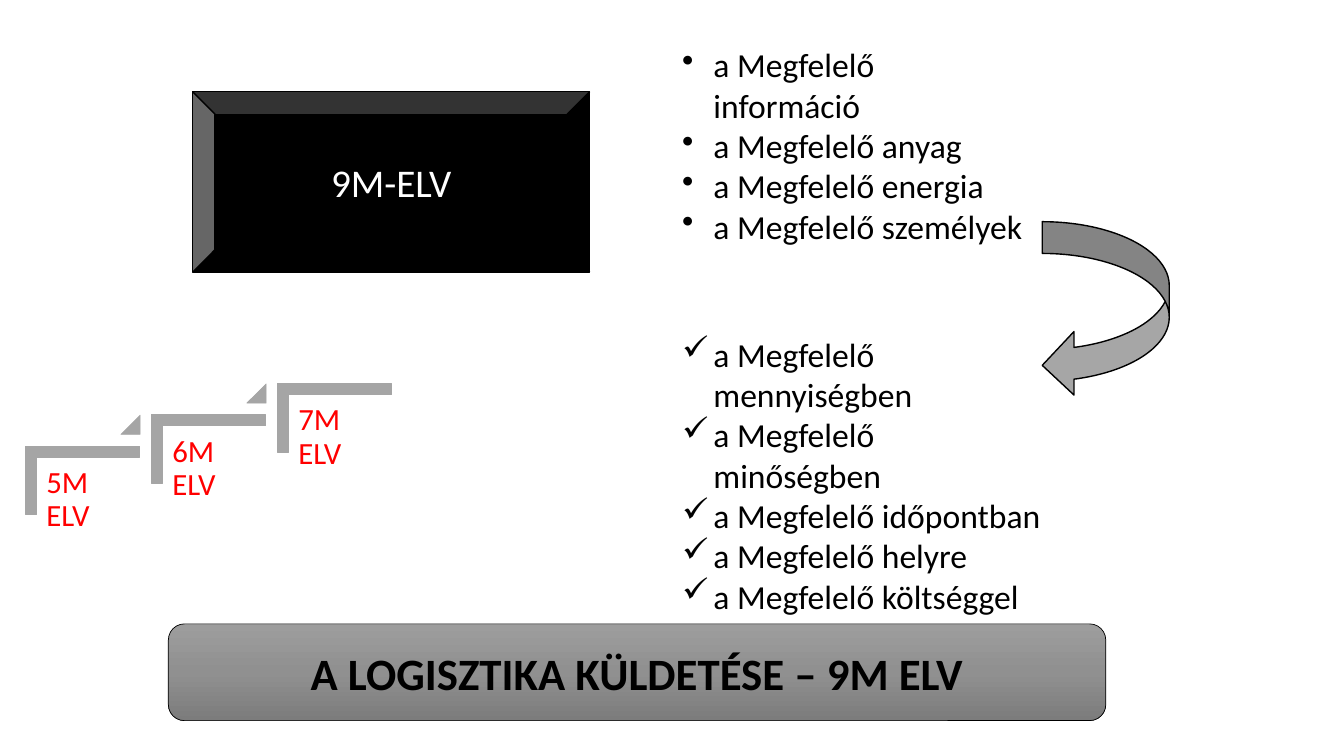
from copy import deepcopy

from lxml import etree
from pptx import Presentation
from pptx.dml.color import RGBColor
from pptx.enum.shapes import MSO_SHAPE
from pptx.enum.text import MSO_ANCHOR, MSO_AUTO_SIZE, PP_ALIGN
from pptx.oxml.ns import qn
from pptx.util import Inches, Pt

BANNER, BEVEL = MSO_SHAPE.ROUNDED_RECTANGLE, MSO_SHAPE.BEVEL
CORNER, TRIANGLE = MSO_SHAPE.CORNER, MSO_SHAPE.ISOSCELES_TRIANGLE
BENT_ARROW = MSO_SHAPE.CURVED_LEFT_ARROW
CENTER, MIDDLE = PP_ALIGN.CENTER, MSO_ANCHOR.MIDDLE
GROW = MSO_AUTO_SIZE.SHAPE_TO_FIT_TEXT

BLACK = RGBColor(0x00, 0x00, 0x00)
WHITE = RGBColor(0xFF, 0xFF, 0xFF)
RED = RGBColor(0xFF, 0x00, 0x00)
STEP_GRAY = RGBColor(0xA5, 0xA5, 0xA5)
ARROW_GRAY = RGBColor(0xA6, 0xA6, 0xA6)
BANNER_STOPS = [(0, RGBColor(0x9D, 0x9D, 0x9D)),
                (0.5, RGBColor(0x90, 0x90, 0x90)),
                (1, RGBColor(0x7C, 0x7C, 0x7C))]

FONT = "Calibri"
W, H = Inches(13.33), Inches(7.5)
INDENT = Inches(0.31)

# All boxes are left, top, width, height in percent of the slide
STEP_RUN, STEP_RISE = 9.37, 4.13
STEPS = ["5M ELV", "6M ELV", "7M ELV"]
INPUTS = ["a Megfelelő információ", "a Megfelelő anyag",
          "a Megfelelő energia", "a Megfelelő személyek"]
TARGETS = ["a Megfelelő mennyiségben", "a Megfelelő minőségben",
           "a Megfelelő időpontban", "a Megfelelő helyre",
           "a Megfelelő költséggel"]


def place(x, y, w, h):
    return [int(share * side / 100)
            for share, side in ((x, W), (y, H), (w, W), (h, H))]


def add_block(s, kind, box, color, line=BLACK, weight=1):
    sp = s.shapes.add_shape(kind, *place(*box))
    sp.shadow.inherit = False
    sp.fill.solid()
    sp.fill.fore_color.rgb = color
    sp.line.color.rgb = line
    sp.line.width = Pt(weight)
    return sp


def shade(sp, stops):
    """Fill a shape from top to bottom with three colour stops."""
    sp.fill.gradient()
    sp.fill.gradient_angle = 270
    first = sp._element.spPr.find(".//" + qn("a:gs"))
    first.addnext(deepcopy(first))
    for stop, (position, color) in zip(sp.fill.gradient_stops, stops):
        stop.position = position
        stop.color.rgb = color


def write(p, text, color, **font):
    r = p.add_run()
    r.text = text
    r.font.name = FONT
    r.font.color.rgb = color
    for name, value in font.items():
        setattr(r.font, name, value)


def add_caption(sp, text, color, **font):
    tf = sp.text_frame
    tf.vertical_anchor = MIDDLE
    p = tf.paragraphs[0]
    p.alignment = CENTER
    write(p, text, color, **font)


def add_text_box(s, box, **frame):
    tf = s.shapes.add_textbox(*place(*box)).text_frame
    tf.word_wrap = True
    for name, value in frame.items():
        setattr(tf, name, value)
    return tf


def add_list(s, box, items, bullet):
    tf = add_text_box(s, box, auto_size=GROW)
    for i, item in enumerate(items):
        p = tf.add_paragraph() if i else tf.paragraphs[0]
        pPr = p._p.get_or_add_pPr()
        pPr.set("marL", str(INDENT))
        pPr.set("indent", str(-INDENT))
        etree.SubElement(pPr, qn("a:buChar"), char=bullet)
        write(p, item, BLACK, size=Pt(24))


def add_step(s, i, label):
    dx, dy = i * STEP_RUN, -i * STEP_RISE
    corner = add_block(s, CORNER, (3.6 + dx, 56 + dy, 5.1, 15.07),
                       STEP_GRAY, STEP_GRAY, 0.5)
    corner.rotation = 90
    corner.adjustments[0] = corner.adjustments[1] = 0.16
    inset = Inches(0.09)
    tf = add_text_box(s, (2.78 + dx, 60.53 + dy, 7.65, 11.87),
                      margin_left=inset, margin_top=inset,
                      margin_right=inset, margin_bottom=inset)
    p = tf.paragraphs[0]
    p.line_spacing = 0.9
    write(p, label, RED, size=Pt(22))
    if i < len(STEPS) - 1:
        rise = add_block(s, TRIANGLE, (9 + dx, 54.93 + dy, 1.43, 2.53),
                         STEP_GRAY, STEP_GRAY, 0.5)
        rise.adjustments[0] = 1


def main():
    prs = Presentation()
    prs.slide_width, prs.slide_height = W, H
    s = prs.slides.add_slide(prs.slide_layouts[6])

    banner = add_block(s, BANNER, (12.53, 82.53, 69.75, 12.8),
                       STEP_GRAY, weight=0.5)
    shade(banner, BANNER_STOPS)
    add_caption(banner, "A LOGISZTIKA KÜLDETÉSE – 9M ELV", BLACK,
                size=Pt(32), bold=True)

    for i, label in enumerate(STEPS):
        add_step(s, i, label)

    add_list(s, (50.02, 5.2, 26.78, 33.6), INPUTS, "•")
    add_list(s, (50.02, 43.47, 28.28, 39.07), TARGETS, "✓")

    title = add_block(s, BEVEL, (14.33, 12.13, 29.55, 23.87), BLACK)
    add_caption(title, "9M-ELV", WHITE, size=Pt(28))
    add_block(s, BENT_ARROW, (77.55, 29.33, 9.45, 23.2), ARROW_GRAY)

    prs.save("out.pptx")


if __name__ == "__main__":
    main()
